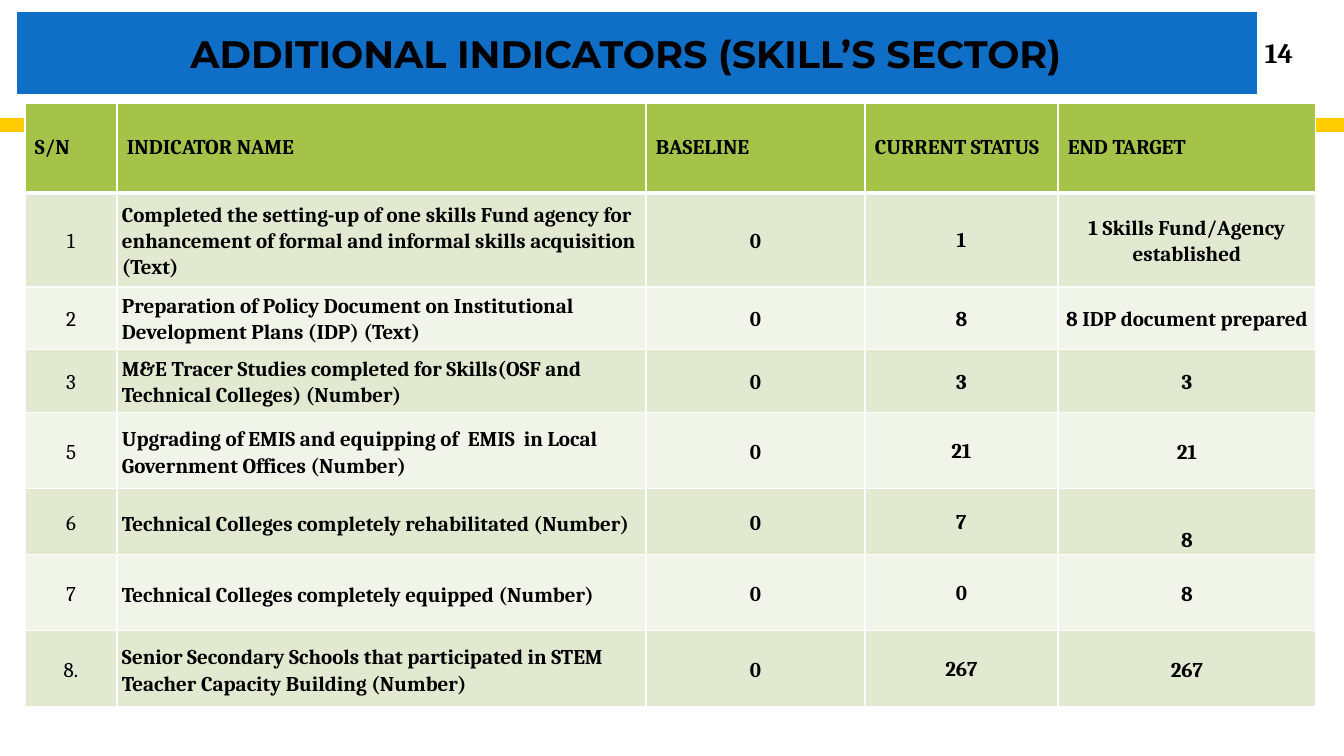
from lxml.etree import SubElement
from pptx import Presentation
from pptx.dml.color import RGBColor
from pptx.enum.shapes import MSO_SHAPE
from pptx.enum.text import MSO_ANCHOR, MSO_AUTO_SIZE, PP_ALIGN
from pptx.oxml.ns import qn
from pptx.util import Pt

PX = 914400 / 100.8

BLACK = RGBColor(0x00, 0x00, 0x00)
WHITE = RGBColor(0xFF, 0xFF, 0xFF)
BLUE = RGBColor(0x0F, 0x6F, 0xC6)
YELLOW = RGBColor(0xFF, 0xCC, 0x00)
GREEN = RGBColor(0xA5, 0xC2, 0x49)
BANDS = [RGBColor(0xE1, 0xE9, 0xD0), RGBColor(0xF0, 0xF4, 0xE9)]

HEADINGS = ["S/N", "INDICATOR NAME", "BASELINE", "CURRENT STATUS", "END TARGET"]
INDICATORS = [
    ("1", "Completed the setting-up of one skills Fund agency for enhancement of "
          "formal and informal skills acquisition (Text)",
     "0", "1", "1 Skills Fund/Agency established"),
    ("2", "Preparation of Policy Document on Institutional Development Plans (IDP) (Text)",
     "0", "8", "8 IDP document prepared"),
    ("3", "M&E Tracer Studies completed for Skills(OSF and Technical Colleges) (Number)",
     "0", "3", "3"),
    ("5", "Upgrading of EMIS and equipping of  EMIS  in Local Government Offices (Number)",
     "0", "21", "21"),
    ("6", "Technical Colleges completely rehabilitated (Number)", "0", "7", "8"),
    ("7", "Technical Colleges completely equipped (Number)", "0", "0", "8"),
    ("8.", "Senior Secondary Schools that participated in STEM Teacher Capacity "
           "Building (Number)",
     "0", "267", "267"),
]
COLUMN_WIDTHS = [92, 529, 219, 193, 258]
ROW_HEIGHTS = [90, 94, 63, 63, 76, 66, 76, 76]
# Left, top, right and bottom margins of the cells in each column
HEADING_MARGINS = (10, 5, 10, 5)
COLUMN_MARGINS = [(1, 1, 1, 0), (5, 1, 5, 0), (1, 1, 1, 0), (0, 0, 0, 0), (1, 1, 1, 0)]


def px(*lengths):
    """Turn pixel lengths into EMU."""
    return [round(length * PX) for length in lengths]


def write(frame, text, size=15, font="Cambria", bold=True, align=PP_ALIGN.CENTER,
          spacing=1.0):
    paragraph = frame.paragraphs[0]
    paragraph.alignment = align
    paragraph.line_spacing = spacing
    run = paragraph.add_run()
    run.text = text
    run.font.size = Pt(size)
    run.font.name = font
    run.font.bold = bold
    run.font.color.rgb = BLACK


prs = Presentation()
prs.slide_width, prs.slide_height = px(1344, 756)
slide = prs.slides.add_slide(prs.slide_layouts[5])
shapes = slide.shapes

stripe = shapes.add_shape(MSO_SHAPE.RECTANGLE, *px(0, 118, 1344, 14))
stripe.shadow.inherit = False
stripe.fill.solid()
stripe.fill.fore_color.rgb = YELLOW
stripe.line.fill.background()

# Indicator table
table = shapes.add_table(len(ROW_HEIGHTS), len(COLUMN_WIDTHS),
                         *px(25, 103, sum(COLUMN_WIDTHS), sum(ROW_HEIGHTS))).table
table.horz_banding = False
for column, width in zip(table.columns, px(*COLUMN_WIDTHS)):
    column.width = width
for row, height in zip(table.rows, px(*ROW_HEIGHTS)):
    row.height = height

for r, texts in enumerate([HEADINGS, *INDICATORS]):
    heading = r == 0
    for c, text in enumerate(texts):
        cell = table.cell(r, c)
        properties = cell._tc.get_or_add_tcPr()
        for side in ("lnL", "lnR", "lnT", "lnB"):
            under_heading = (r, side) in ((0, "lnB"), (1, "lnT"))
            border = SubElement(properties, qn(f"a:{side}"),
                                w=str(Pt(3 if under_heading else 1)))
            SubElement(SubElement(border, qn("a:solidFill")), qn("a:srgbClr"),
                       val=str(WHITE))
        cell.fill.solid()
        cell.fill.fore_color.rgb = GREEN if heading else BANDS[(r - 1) % 2]
        cell.vertical_anchor = MSO_ANCHOR.MIDDLE
        (cell.margin_left, cell.margin_top, cell.margin_right,
         cell.margin_bottom) = px(*(HEADING_MARGINS if heading else COLUMN_MARGINS[c]))
        if heading:
            spacing = 1.0
        else:
            spacing = 1.15 if c == 1 and r >= 4 else 1.07
        write(cell.text_frame, text, bold=heading or c > 0, spacing=spacing,
              align=PP_ALIGN.LEFT if heading or c == 1 else PP_ALIGN.CENTER)

rehabilitated_target = table.cell(5, 4)
rehabilitated_target.vertical_anchor = MSO_ANCHOR.BOTTOM
rehabilitated_target.margin_bottom = px(2)[0]

page_number = shapes.add_textbox(*px(1230, 32, 98, 40)).text_frame
page_number.word_wrap = True
page_number.vertical_anchor = MSO_ANCHOR.MIDDLE
write(page_number, "14", size=20)

# Title banner
title = shapes.title
title.left, title.top, title.width, title.height = px(16, 11, 1242, 84)
title.fill.solid()
title.fill.fore_color.rgb = BLUE
title.line.color.rgb = WHITE
title.line.width = Pt(0.75)
banner = title.text_frame
banner.auto_size = MSO_AUTO_SIZE.NONE
banner.word_wrap = True
banner.vertical_anchor = MSO_ANCHOR.MIDDLE
banner.margin_left, banner.margin_right = px(10, 32)
write(banner, "ADDITIONAL INDICATORS (SKILL’S SECTOR)", size=27.3, font="Montserrat")

prs.save("out.pptx")
